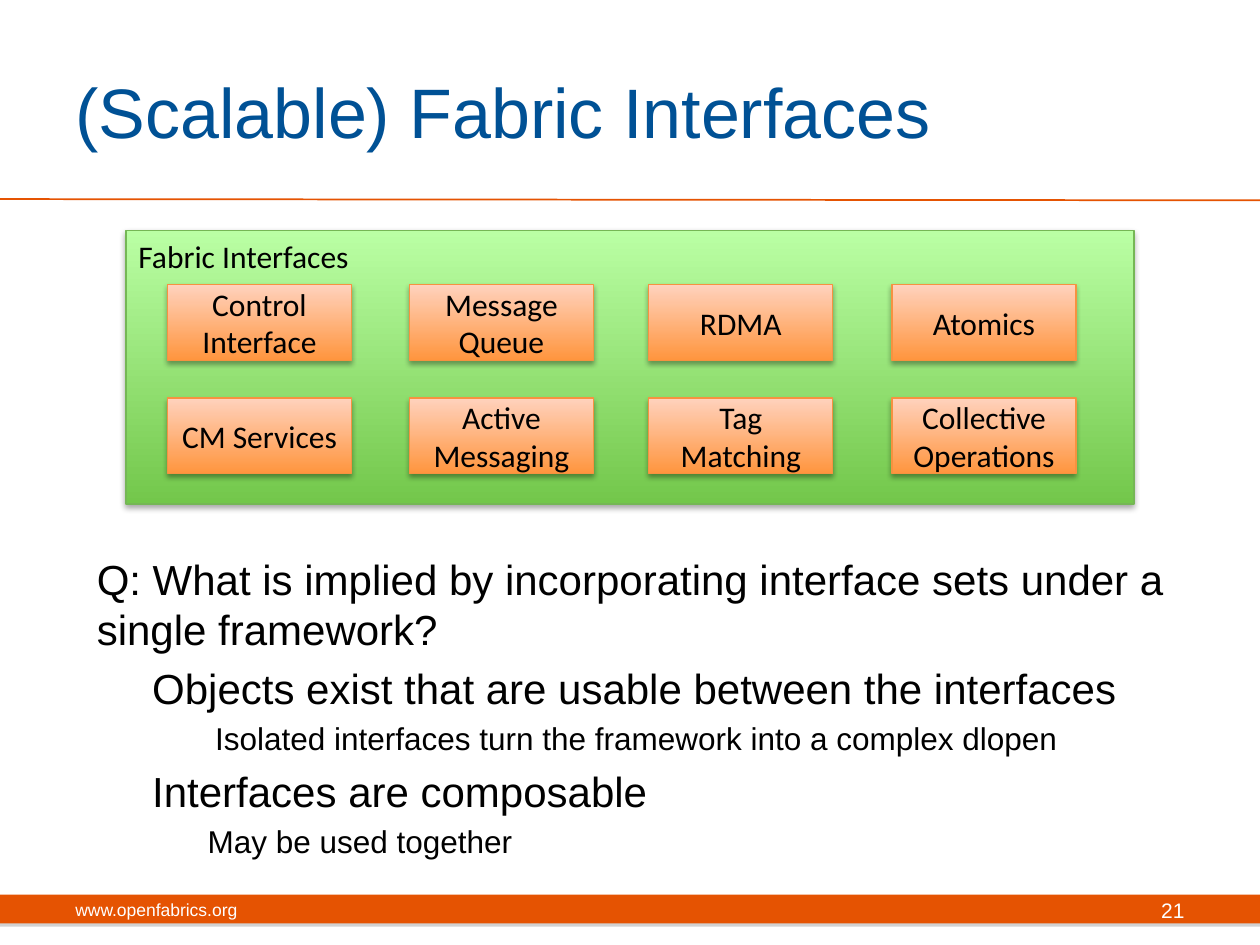
from lxml import etree
from pptx import Presentation, util as u
from pptx.dml.color import RGBColor
from pptx.enum import shapes, text
from pptx.oxml.ns import qn

WIDE, HIGH = 10, 7.5
COLS = (1.33, 3.25, 5.15, 7.08)
ROWS = (2.26, 3.16)
CARDS = (
    ("Control\nInterface", "Message Queue", "RDMA", "Atomics"),
    ("CM Services", "Active Messaging", "Tag Matching", "Collective Operations"),
)
POINTS = (
    ("Q: What is implied by incorporating interface sets under a single framework?", 0, 0, 24),
    ("Objects exist that are usable between the interfaces", 1, 0.44, 24),
    ("Isolated interfaces turn the framework into a complex dlopen", 2, 0.94, 18),
    ("Interfaces are composable", 1, 0.44, 24),
    ("May be used together", 2, 0.88, 18),
)
LEFT, MID, RIGHT = text.PP_ALIGN.LEFT, text.PP_ALIGN.CENTER, text.PP_ALIGN.RIGHT
TOP, HALF = text.MSO_ANCHOR.TOP, text.MSO_ANCHOR.MIDDLE


def paint(code):
    return RGBColor.from_string(code)


def style(para, size, font, color):
    para.font.size, para.font.name = u.Pt(size), font
    para.font.color.rgb = paint(color)


def write(shape, words, size, font="Arial", color="000000", align=LEFT, anchor=HALF):
    frame = shape.text_frame
    frame.word_wrap, frame.vertical_anchor = True, anchor
    frame.text = words
    for para in frame.paragraphs:
        para.alignment = align
        style(para, size, font, color)


def label(slide, box, words, size, **look):
    write(slide.shapes.add_textbox(*map(u.Inches, box)), words, size, **look)


def shade(shape, color, blur):
    """Cast a soft shadow straight down."""
    shape.shadow.inherit = False
    effects = shape._element.spPr.find(qn("a:effectLst"))
    cast = etree.SubElement(effects, qn("a:outerShdw"), blurRad=str(u.Pt(blur)),
                            dist=str(u.Pt(1.8)), dir="5400000", rotWithShape="0")
    tone = etree.SubElement(cast, qn("a:srgbClr"), val=color)
    etree.SubElement(tone, qn("a:alpha"), val="35000")


def block(slide, box):
    return slide.shapes.add_shape(shapes.MSO_SHAPE.RECTANGLE, *map(u.Inches, box))


def panel(slide, box, words, low, high, edge, **look):
    """Add a labelled box that fades from low at its foot to high at its top."""
    shape = block(slide, box)
    shape.fill.gradient()
    shape.fill.gradient_angle = 90
    for stop, color, place in zip(shape.fill.gradient_stops, (low, high), (0, 1)):
        stop.color.rgb, stop.position = paint(color), place
    shape.line.color.rgb, shape.line.width = paint(edge), u.Pt(0.75)
    shade(shape, "000000", 3.1)
    write(shape, words, 18, font="Calibri", **look)


def frame(slide):
    """Add the footer band and the rule under the title."""
    band = block(slide, (0, 7.1, WIDE, 0.23))
    band.fill.solid()
    band.fill.fore_color.rgb = paint("E55302")
    band.line.fill.background()
    shade(band, "808080", 0)
    ends = map(u.Inches, (0, 1.58, WIDE, 1.59))
    rule = slide.shapes.add_connector(shapes.MSO_CONNECTOR.STRAIGHT, *ends)
    rule.line.color.rgb, rule.line.width = paint("E55302"), u.Pt(1)
    etree.SubElement(rule._element.spPr, qn("a:effectLst"))


def outline(slide, box):
    body = slide.shapes.add_textbox(*map(u.Inches, box)).text_frame
    body.word_wrap = True
    for i, (words, level, indent, size) in enumerate(POINTS):
        para = body.add_paragraph() if i else body.paragraphs[0]
        para.text, para.level = words, level
        props = para._p.get_or_add_pPr()
        props.set("marL", str(u.Inches(indent)))
        props.set("indent", "0")
        if i:
            para.space_before = u.Pt(size * 0.2)
        style(para, size, "Arial", "000000")


def main():
    deck = Presentation()
    deck.slide_width, deck.slide_height = u.Inches(WIDE), u.Inches(HIGH)
    slide = deck.slides.add_slide(deck.slide_layouts[6])
    frame(slide)
    label(slide, (0.5, 0.25, 8.17, 1.25), "(Scalable) Fabric Interfaces", 40, color="005195")
    outline(slide, (0.67, 4.34, 9, 2.75))
    label(slide, (0.5, 7.02, 3.17, 0.4), "www.openfabrics.org", 10, color="FFFFFF")
    label(slide, (7.17, 7.02, 2.33, 0.4), "21", 12, color="FFFFFF", align=RIGHT)
    panel(slide, (1, 1.83, 8, 2.17), "Fabric Interfaces",
          "73C74B", "BAFFA4", "75B755", anchor=TOP)
    for top, names in zip(ROWS, CARDS):
        for left, name in zip(COLS, names):
            panel(slide, (left, top, 1.46, 0.6), name,
                  "FF953E", "FFD2BD", "F69240", align=MID)
    deck.save("out.pptx")


if __name__ == "__main__":
    main()
